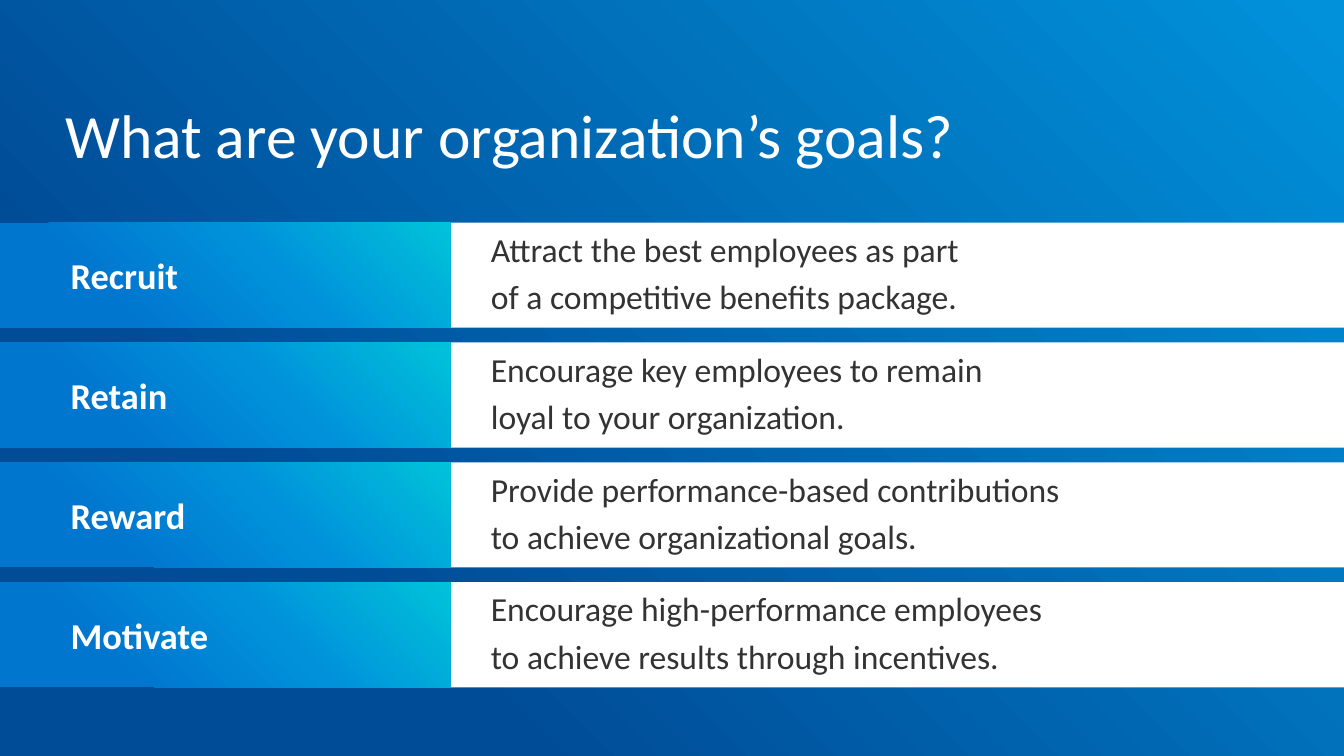
from copy import deepcopy

from pptx import Presentation
from pptx.dml.color import RGBColor
from pptx.enum import shapes, text
from pptx.util import Cm, Pt

TITLE = "What are your organization’s goals?"
GOALS = [
    ("Recruit", ["Attract the best employees as part",
                 "of a competitive benefits package."]),
    ("Retain", ["Encourage key employees to remain",
                "loyal to your organization."]),
    ("Reward", ["Provide performance-based contributions",
                "to achieve organizational goals."]),
    ("Motivate", ["Encourage high-performance employees",
                  "to achieve results through incentives."]),
]
COLORS = {"navy": "004C97", "blue": "0076CF", "sky": "0091DA",
          "turquoise": "00C3D9", "white": "FFFFFF", "ink": "333333"}
BACKGROUND_STOPS = [(0.25, "navy"), (0.99, "sky")]
LABEL_STOPS = [(0.25, "blue"), (0.6, "sky"), (1, "turquoise")]
FONT = "Calibri"

SLIDE_WIDTH, SLIDE_HEIGHT = Cm(33.87), Cm(19.05)
FIRST_ROW_TOP, ROW_PITCH, ROW_HEIGHT = Cm(5.61), Cm(3.02), Cm(2.65)
LABEL_WIDTH = Cm(11.35)


def color(name):
    return RGBColor.from_string(COLORS[name])


def fill_gradient(fill, stops):
    """Fill with the given (position, color) stops, rising to the top right."""
    fill.gradient()
    fill.gradient_angle = 45
    stop_list = fill.gradient_stops[0]._gs.getparent()
    while len(stop_list) < len(stops):
        stop_list.append(deepcopy(stop_list[-1]))
    for stop, (position, name) in zip(fill.gradient_stops, stops):
        stop.color.rgb = color(name)
        stop.position = position


def add_run(paragraph, words, size, name, bold=False):
    run = paragraph.add_run()
    run.text = words
    run.font.name = FONT
    run.font.size = Pt(size)
    run.font.bold = bold
    run.font.color.rgb = color(name)


def set_frame(frame, left, top, right, bottom, anchor):
    frame.margin_left, frame.margin_top = Cm(left), Cm(top)
    frame.margin_right, frame.margin_bottom = Cm(right), Cm(bottom)
    frame.vertical_anchor = anchor
    frame.word_wrap = True
    frame.auto_size = text.MSO_AUTO_SIZE.NONE


def add_box(slide, left, top, width):
    box = slide.shapes.add_shape(shapes.MSO_SHAPE.RECTANGLE,
                                 left, top, width, ROW_HEIGHT)
    box.shadow.inherit = False
    box.line.fill.background()
    return box


def add_goal(slide, top, label, lines):
    description = add_box(slide, LABEL_WIDTH, top, SLIDE_WIDTH - LABEL_WIDTH)
    description.fill.solid()
    description.fill.fore_color.rgb = color("white")
    frame = description.text_frame
    set_frame(frame, 1.02, 1.02, 1.02, 1.02, text.MSO_ANCHOR.MIDDLE)
    for index, line in enumerate(lines):
        paragraph = frame.add_paragraph() if index else frame.paragraphs[0]
        paragraph.alignment = text.PP_ALIGN.LEFT
        paragraph.line_spacing = 0.9
        paragraph.space_after = Pt(8)
        add_run(paragraph, line, 24, "ink")

    label_box = add_box(slide, 0, top, LABEL_WIDTH)
    fill_gradient(label_box.fill, LABEL_STOPS)
    frame = label_box.text_frame
    set_frame(frame, 1.78, 0.13, 1.02, 0.13, text.MSO_ANCHOR.MIDDLE)
    frame.paragraphs[0].alignment = text.PP_ALIGN.LEFT
    add_run(frame.paragraphs[0], label, 26, "white", bold=True)


def main():
    presentation = Presentation()
    presentation.slide_width, presentation.slide_height = SLIDE_WIDTH, SLIDE_HEIGHT
    slide = presentation.slides.add_slide(presentation.slide_layouts[5])
    fill_gradient(slide.background.fill, BACKGROUND_STOPS)

    title = slide.shapes.title
    title.left, title.top = Cm(1.65), Cm(2.44)
    title.width, title.height = Cm(30.48), Cm(1.47)
    set_frame(title.text_frame, 0, 0, 0, 0, text.MSO_ANCHOR.TOP)
    paragraph = title.text_frame.paragraphs[0]
    paragraph.alignment = text.PP_ALIGN.LEFT
    add_run(paragraph, TITLE, 44, "white")

    for row, (label, lines) in enumerate(GOALS):
        add_goal(slide, FIRST_ROW_TOP + row * ROW_PITCH, label, lines)

    presentation.save("out.pptx")


if __name__ == "__main__":
    main()
